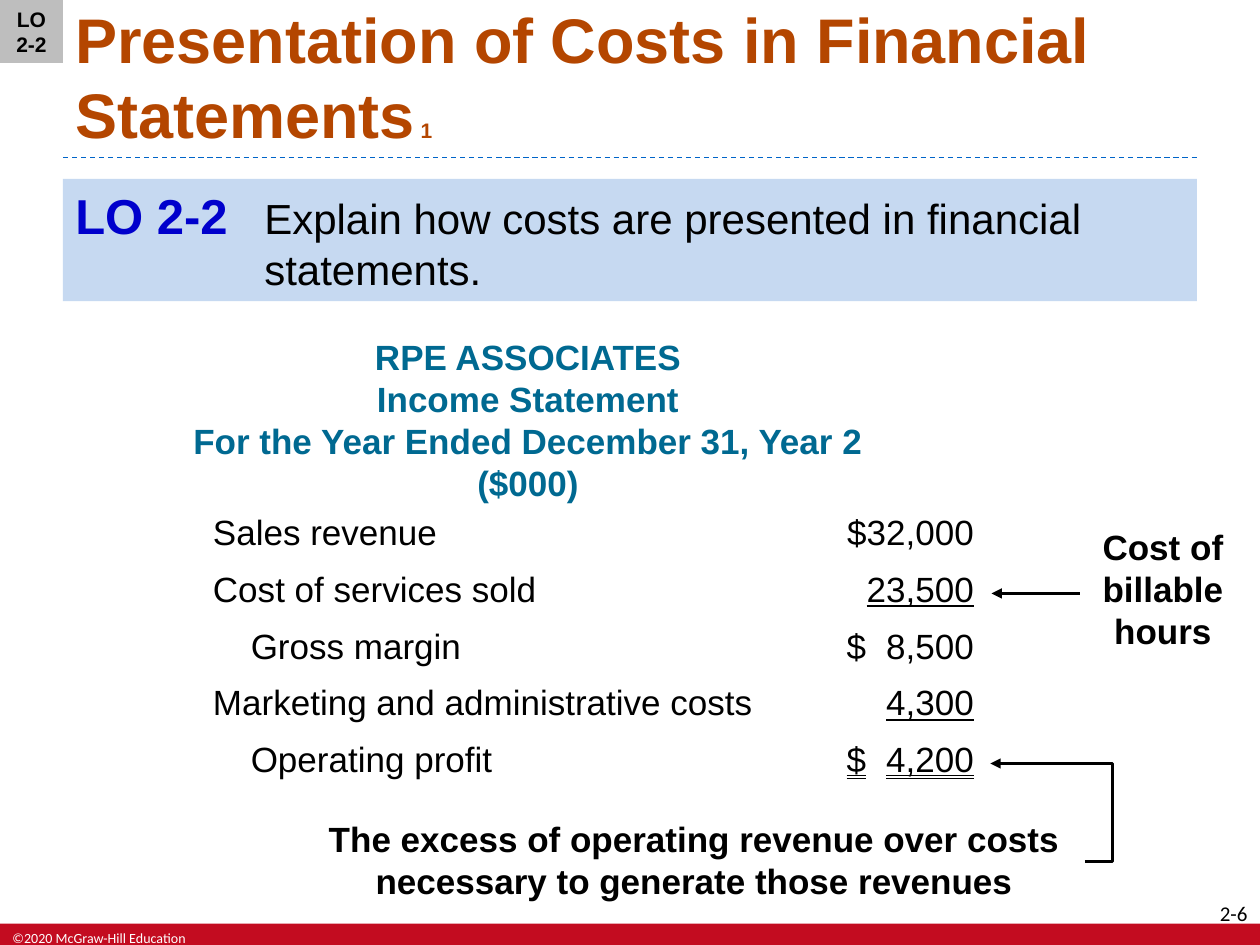
from dataclasses import dataclass
from pptx import Presentation
from pptx.dml.color import RGBColor
from pptx.enum import dml, shapes, text
from pptx.oxml import parse_xml
from pptx.oxml.ns import nsdecls, qn
from pptx.util import Inches, Pt


@dataclass(frozen=True)
class Theme:
    font: str = "Arial"
    foot: str = "Calibri"
    ink: str = "000000"
    white: str = "FFFFFF"
    red: str = "C30C20"
    rule: str = "0064C8"
    title: str = "B44600"
    band: str = "C6D9F1"
    goal: str = "0000CC"
    head: str = "006991"
    tag: str = "BEBEBE"
    huge: int = 36
    large: int = 28
    mid: int = 24
    body: int = 20
    small: int = 12
    tiny: int = 8


T = Theme()
AL, MID = text.PP_ALIGN, text.MSO_ANCHOR.MIDDLE
ONE, TWO = text.MSO_UNDERLINE.SINGLE_LINE, text.MSO_UNDERLINE.DOUBLE_LINE

TITLE = "Presentation of Costs in Financial Statements"
GOAL = ("LO 2-2", "Explain how costs are presented in financial statements.")
HEAD = "\v".join(["RPE ASSOCIATES", "Income Statement",
                  "For the Year Ended December 31, Year 2", "($000)"])
# label, indent, amount (a tab sets the figure right), underline
ROWS = [
    ("Sales revenue", 0, "$32,000", None),
    ("Cost of services sold", 0, "\t23,500", ONE),
    ("Gross margin", 0.3, "$\t8,500", None),
    ("Marketing and administrative costs", 0, "\t4,300", ONE),
    ("Operating profit", 0.3, "$\t4,200", TWO),
]
COLS, ROW = (4.6, 1.64), 0.45
HOURS = "Cost of billable hours"
EXCESS = "The excess of operating revenue over costs necessary to generate those revenues"

deck = Presentation()
deck.slide_width, deck.slide_height = Inches(10), Inches(7.5)
page = deck.slides.add_slide(deck.slide_layouts[6]).shapes


def rgb(code):
    return RGBColor.from_string(code)


def style(run, size, color, bold=False, face=T.font):
    font = run.font
    font.size, font.bold, font.name = Pt(size), bold, face
    font.color.rgb = rgb(color)


def write(frame, words, size, color, bold=False, align=AL.LEFT, face=T.font):
    para = frame.paragraphs[0]
    para.text, para.alignment = words, align
    for run in para.runs:
        style(run, size, color, bold, face)
    return para


def box(at, words="", size=T.body, color=T.ink, bold=True, align=AL.CENTER,
        fill=None, anchor=text.MSO_ANCHOR.TOP, face=T.font):
    """Put words in a text box, or in a filled rectangle when fill is given."""
    area = [Inches(n) for n in at]
    if fill:
        shape = page.add_shape(shapes.MSO_SHAPE.RECTANGLE, *area)
        shape.shadow.inherit = False
        shape.fill.solid()
        shape.fill.fore_color.rgb = rgb(fill)
        shape.line.fill.background()
    else:
        shape = page.add_textbox(*area)
    frame = shape.text_frame
    frame.word_wrap, frame.vertical_anchor = True, anchor
    if words:
        write(frame, words, size, color, bold, align, face)
    return shape


def line(kind, start, end, color=T.ink, width=1.5, arrow=True):
    link = page.add_connector(kind, *[Inches(n) for n in start + end])
    link.line.color.rgb, link.line.width = rgb(color), Pt(width)
    if arrow:
        link.line._get_or_add_ln().append(
            parse_xml(f'<a:tailEnd {nsdecls("a")} type="triangle"/>'))
    link._element.spPr.append(parse_xml(f'<a:effectLst {nsdecls("a")}/>'))
    return link


def indent(para, left, hang=0):
    props = para._p.get_or_add_pPr()
    props.set("marL", str(Inches(left)))
    props.set("indent", str(Inches(hang)))
    return props


def tab(para, at):
    para._p.get_or_add_pPr().append(parse_xml(
        f'<a:tabLst {nsdecls("a")}><a:tab pos="{Inches(at)}" algn="r"/></a:tabLst>'))


def statement(left, top):
    shape = page.add_table(len(ROWS), len(COLS), Inches(left), Inches(top),
                           Inches(sum(COLS)), Inches(ROW * len(ROWS)))
    grid = shape.table
    grid.first_row = grid.horz_banding = False
    for col, width in zip(grid.columns, COLS):
        col.width = Inches(width)
    for r, (label, inset, amount, under) in enumerate(ROWS):
        grid.rows[r].height = Inches(ROW)
        name, cost = grid.cell(r, 0), grid.cell(r, 1)
        for cell in (name, cost):
            cell.fill.background()
        indent(write(name.text_frame, label, T.body, T.ink), inset)
        gap = "\t" in amount
        para = write(cost.text_frame, amount, T.body, T.ink,
                     align=AL.LEFT if gap else AL.RIGHT)
        if gap:
            cost.margin_left = Inches(0.53)
            tab(para, 1.01)
        for run in para.runs:
            run.font.underline = under
    # The plain grid-free table style
    grid._tbl.tblPr.find(qn("a:tableStyleId")).text = "{2D5ABB26-0587-4C30-8999-92F81FD0307C}"


# Footer and rule
box((0, 7.33, 10, 0.17), fill=T.red)
foot = box((0, 7.33, 1.8, 0.17), "©2020 McGraw-Hill Education", T.tiny, T.white,
           False, AL.LEFT, face=T.foot)
box((9.26, 7.08, 0.74, 0.33), "2-6", T.small, T.ink, False, AL.RIGHT, anchor=MID, face=T.foot)
rule = line(shapes.MSO_CONNECTOR.STRAIGHT, (0.5, 1.25), (9.5, 1.25), T.rule, 0.75, False)
rule.line.dash_style = dml.MSO_LINE.DASH

# Title and learning objective
title = box((0.5, 0.05, 9, 1.2), TITLE, T.huge, T.title, True, AL.LEFT,
            anchor=text.MSO_ANCHOR.BOTTOM)
mark = title.text_frame.paragraphs[0].add_run()
mark.text = " 1"
style(mark, T.small, T.title, True)

goal = box((0.5, 1.42, 9, 0.97), GOAL[0] + "\t", T.large, T.goal, True, AL.LEFT, T.band)
para = goal.text_frame.paragraphs[0]
indent(para, 1.5, -1.5)
aim = para.add_run()
aim.text = GOAL[1]
style(aim, T.mid, T.ink)

# Income statement and its notes
box((0.5, 2.61, 7.38, 1.39), HEAD, color=T.head)
statement(1.59, 4.03)
line(shapes.MSO_CONNECTOR.STRAIGHT, (8.57, 4.71), (7.87, 4.71))
box((8.63, 4.12, 1.2, 1.15), HOURS)
note = box((2.41, 6.44, 6.2, 0.8), EXCESS)
bend = line(shapes.MSO_CONNECTOR.ELBOW, (8.6, 6.86), (7.86, 6.06))
bend.begin_connect(note, 3)
bend._element.spPr.find(qn("a:prstGeom")).get_or_add_avLst().append(
    parse_xml(f'<a:gd {nsdecls("a")} name="adj1" fmla="val -29200"/>'))
box((0, 0, 0.5, 0.5), "LO 2-2", T.small, fill=T.tag, anchor=MID)

deck.save("out.pptx")
